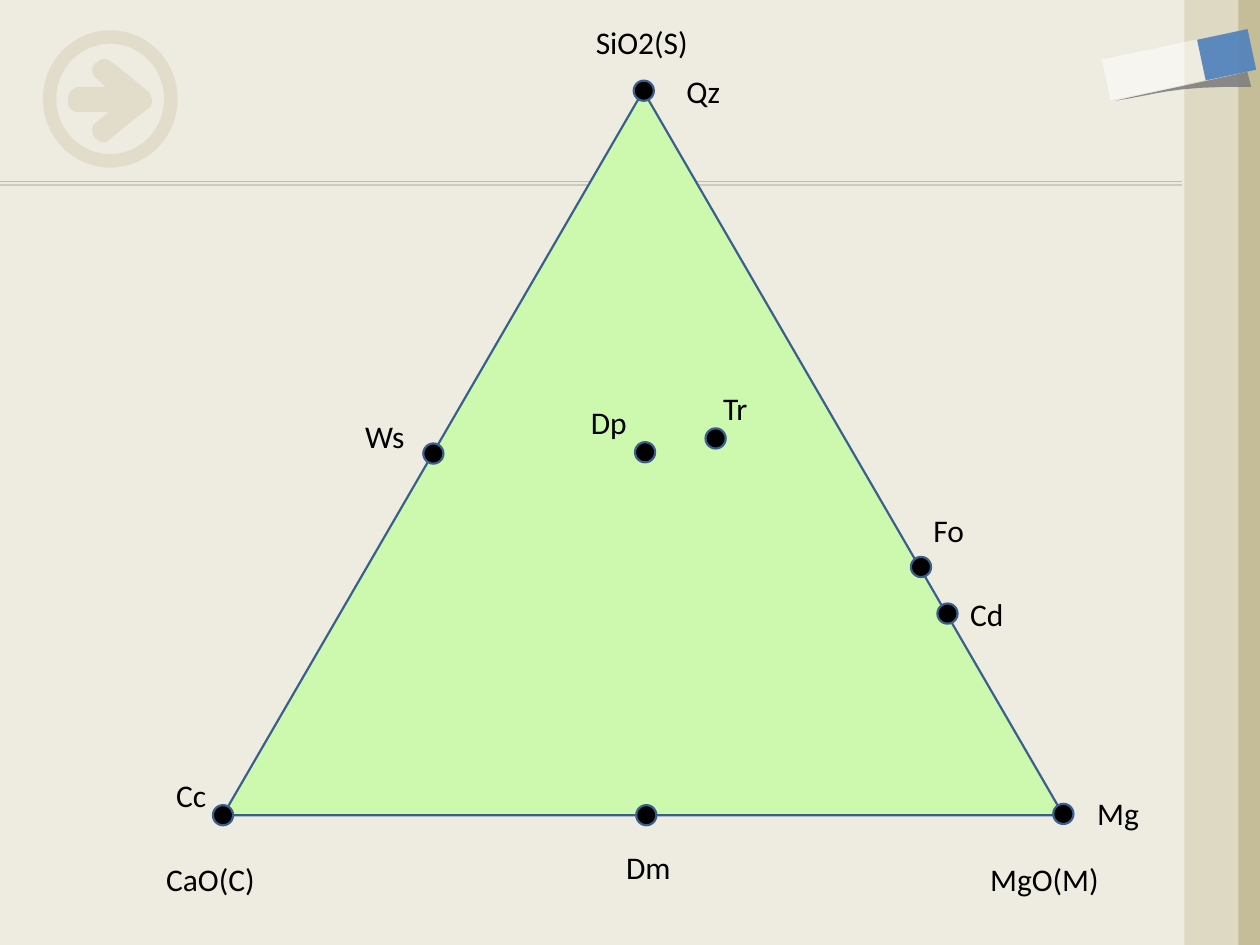
from lxml import etree
from pptx import Presentation
from pptx.dml.color import RGBColor
from pptx.enum import shapes as s, text as t
from pptx.oxml import parse_xml
from pptx.oxml.ns import nsdecls, qn
from pptx.util import Inches, Pt

CREAM = RGBColor(0xEE, 0xEC, 0xE1)
TAN = RGBColor(0xC4, 0xBD, 0x97)
SAND = RGBColor(0xDD, 0xD9, 0xC3)
GRAY = RGBColor(0x80, 0x80, 0x80)
BLUE = RGBColor(0x4F, 0x81, 0xBD)
NAVY = RGBColor(0x3A, 0x5F, 0x8C)
GREEN = RGBColor(0xCC, 0xF9, 0xAD)
WHITE = RGBColor(0xFF, 0xFF, 0xFF)
BLACK = RGBColor(0, 0, 0)
KIND = s.MSO_SHAPE

prs = Presentation()
prs.slide_width, prs.slide_height = Inches(10), Inches(7.5)
slide = prs.slides.add_slide(prs.slide_layouts[6])
slide.background.fill.solid()
slide.background.fill.fore_color.rgb = CREAM
tree = slide.shapes


def paint(shape, color, alpha=100, edge=None):
    """Fill a shape, with alpha in percent, and outline it if edge is given."""
    shape.shadow.inherit = False
    shape.fill.solid()
    shape.fill.fore_color.rgb = color
    if alpha < 100:
        tone = shape.fill._xPr.find(qn("a:solidFill"))[0]
        etree.SubElement(tone, qn("a:alpha")).set("val", str(alpha * 1000))
    if edge is None:
        shape.line.fill.background()
    else:
        shape.line.color.rgb = edge
        shape.line.width = Pt(1.25)


def outline(start, steps):
    """Build a closed shape; a step has one point (line) or three (curve)."""
    points = [start]
    for step in steps:
        if len(step) == 1:
            points += step
            continue
        a, (b, c, d) = points[-1], step
        for i in range(1, 9):
            k = i / 8
            m = 1 - k
            points.append(tuple(
                m**3 * a[n] + 3 * m * m * k * b[n] + 3 * m * k * k * c[n] + k**3 * d[n]
                for n in (0, 1)))
    dots = [(Inches(x), Inches(y)) for x, y in points]
    pen = tree.build_freeform(*dots[0])
    pen.add_line_segments(dots[1:], close=True)
    return pen.convert_to_shape()


# Title rule with a thin shadow below it
rule = tree.add_connector(s.MSO_CONNECTOR.STRAIGHT, 0, Inches(1.44), Inches(9.38), Inches(1.44))
rule.line.color.rgb = TAN
rule.line.width = Pt(0.75)
rule._element.spPr.append(parse_xml(
    f'<a:effectLst {nsdecls("a")}><a:outerShdw blurRad="0" dist="25400" dir="5400000">'
    '<a:srgbClr val="000000"><a:alpha val="22000"/></a:srgbClr></a:outerShdw></a:effectLst>'))

# Arrow in a ring
arrow = outline((1.18, 0.73), [
    [(1.12, 0.68), (0.92, 0.51), (0.85, 0.47)],
    [(0.81, 0.46), (0.79, 0.48), (0.76, 0.5)],
    [(0.73, 0.52), (0.72, 0.57), (0.75, 0.61)],
    [(0.84, 0.69)], [(0.61, 0.69)],
    [(0.55, 0.71), (0.54, 0.76), (0.54, 0.79)],
    [(0.53, 0.83), (0.56, 0.88), (0.61, 0.89)],
    [(0.86, 0.89)], [(0.74, 0.99)],
    [(0.73, 1.02), (0.73, 1.07), (0.75, 1.09)],
    [(0.77, 1.11), (0.8, 1.13), (0.84, 1.13)],
    [(1.01, 0.99), (1.19, 0.85), (1.19, 0.85)],
    [(1.22, 0.82), (1.2, 0.75), (1.18, 0.73)],
])
paint(arrow, TAN, 30)
ring = tree.add_shape(KIND.DONUT, *map(Inches, (0.34, 0.24, 1.07, 1.09)))
ring.adjustments[0] = 0.1
paint(ring, TAN, 30)

# Side bands
for x, w, color in ((9.41, 0.59, TAN), (9.4, 0.43, SAND)):
    paint(tree.add_shape(KIND.RECTANGLE, *map(Inches, (x, 0, w, 7.5))), color)

# Tilted eraser with its shadow
shade = outline((9.9, 0.57), [
    [(9.93, 0.69)],
    [(9.28, 0.68), (9.15, 0.76), (8.85, 0.8)],
    [(9.2, 0.72), (9.55, 0.65), (9.9, 0.57)],
])
paint(shade, GRAY, 90)
for box, color, alpha in (((9.57, 0.23, 0.33, 0.41), BLUE, 90),
                          ((8.99, 0.17, 0.33, 0.77), WHITE, 50)):
    part = tree.add_shape(KIND.RECTANGLE, *map(Inches, box))
    part.rotation = 78
    paint(part, color, alpha)

# Ternary diagram
field = tree.add_shape(KIND.ISOSCELES_TRIANGLE, *map(Inches, (1.77, 0.72, 6.67, 5.75)))
paint(field, GREEN, edge=NAVY)

DOT = 0.16
minerals = [  # name, dot left and top, label left, top and width
    ("Cc", 1.69, 6.39, 1.3, 6.11, 0.46),
    ("Qz", 5.03, 0.64, 5.35, 0.52, 0.5),
    ("Dp", 5.04, 3.51, 4.59, 3.15, 0.51),
    ("Mg", 8.36, 6.38, 8.61, 6.25, 0.54),
    ("Cd", 7.44, 4.79, 7.6, 4.67, 0.49),
    ("Fo", 7.23, 4.42, 7.31, 4.01, 0.46),
    ("Tr", 5.6, 3.4, 5.64, 3.04, 0.41),
    ("Ws", 3.36, 3.52, 2.8, 3.26, 0.52),
    ("Dm", 5.05, 6.39, 4.87, 6.68, 0.58),
]
labels = [
    ("CaO(C)", 1.22, 6.78, 0.95),
    ("MgO(M)", 7.76, 6.78, 1.08),
    ("SiO2(S)", 4.63, 0.13, 0.99),
]
for name, x, y, *place in minerals:
    dot = tree.add_shape(KIND.OVAL, *map(Inches, (x, y, DOT, DOT)))
    paint(dot, BLACK, edge=NAVY)
    labels.append((name, *place))

style = {"name": "Calibri", "size": Pt(18)}
for name, x, y, w in labels:
    frame = tree.add_textbox(*map(Inches, (x, y, w, 0.4))).text_frame
    frame.word_wrap = False
    frame.auto_size = t.MSO_AUTO_SIZE.SHAPE_TO_FIT_TEXT
    run = frame.paragraphs[0].add_run()
    run.text = name
    for key, value in style.items():
        setattr(run.font, key, value)
    run.font.color.rgb = BLACK

prs.save("out.pptx")
